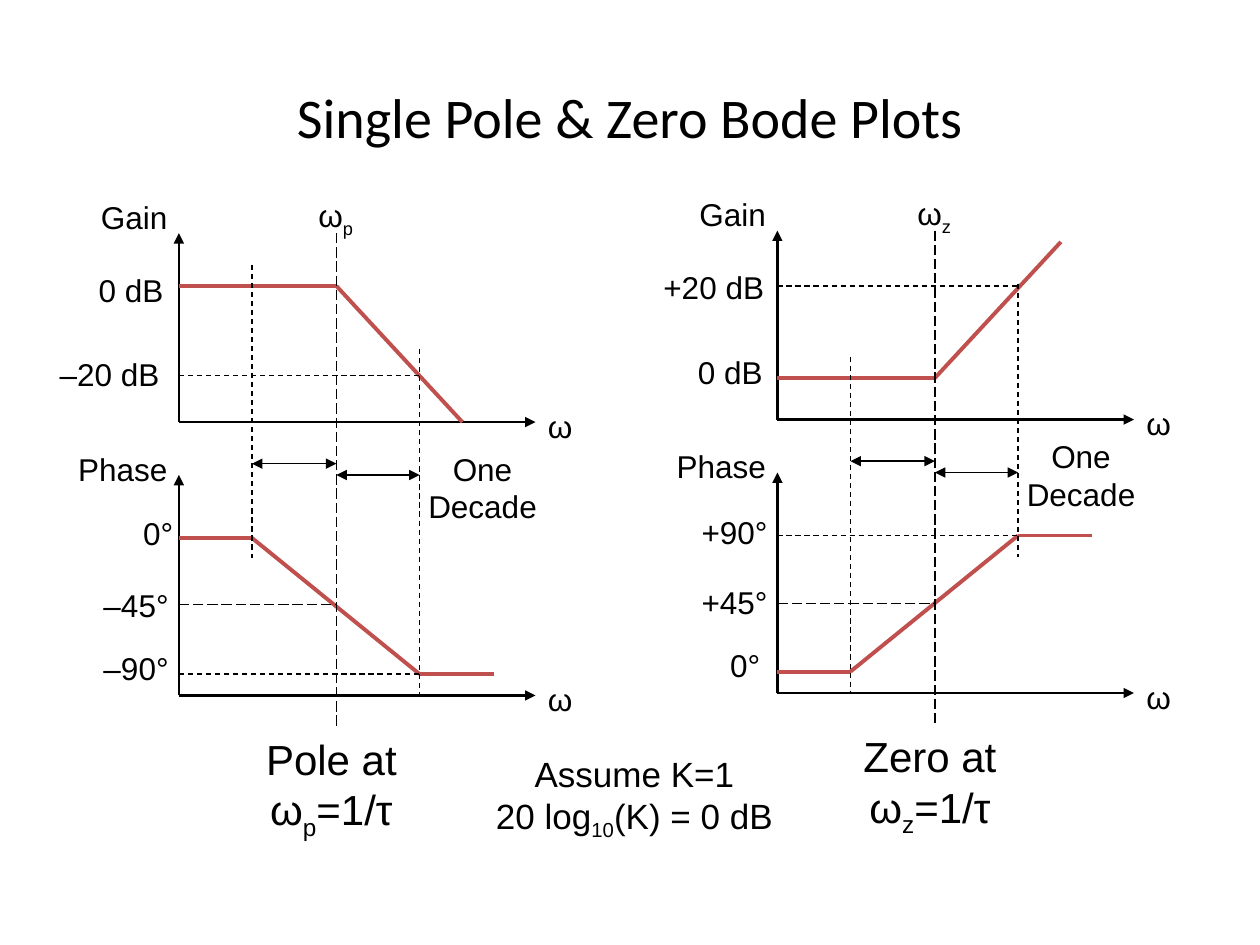
from pptx import Presentation
from pptx.dml.color import RGBColor
from pptx.enum.dml import MSO_LINE
from pptx.enum.shapes import MSO_CONNECTOR
from pptx.enum.text import MSO_ANCHOR, MSO_AUTO_SIZE, PP_ALIGN
from pptx.oxml.ns import qn
from pptx.util import Inches, Pt
from lxml import etree

STRAIGHT = MSO_CONNECTOR.STRAIGHT
DASH, LONG_DASH = MSO_LINE.DASH, MSO_LINE.LONG_DASH
LEFT, CENTER = PP_ALIGN.LEFT, PP_ALIGN.CENTER
MIDDLE = MSO_ANCHOR.MIDDLE
FIT = MSO_AUTO_SIZE.SHAPE_TO_FIT_TEXT
BLACK, RED = "000000", "C0504D"
BEFORE, CORNER, AFTER, AXIS_END = 0.58, 1.25, 1.91, 2.83
GAIN_BASE, PHASE_TOP, PHASE_BASE = 1.5, 1.92, 3.67

POLE = {
    "origin": (1.42, 1.85), "name": "Pole", "sub": "p", "decade_top": 1.67,
    "curves": [[(0, 0.42), (CORNER, 0.42), (2.25, 1.5)],
               [(0, 2.42), (BEFORE, 2.42), (AFTER, 3.5), (2.5, 3.5)]],
    "levels": [(1.13, AFTER, DASH), (2.95, CORNER, LONG_DASH), (3.5, AFTER, DASH)],
    "drops": [(BEFORE, 0.25, 2.58), (AFTER, 0.92, PHASE_BASE)],
    "ticks": [("0 dB", -0.84, 0.25, 0.92), ("–20 dB", -1.09, 0.92, 1.08),
              ("0°", -0.5, 2.18, 0.67), ("–45°", -0.84, 2.75, 1),
              ("–90°", -0.84, 3.25, 1)],
}
ZERO = {
    "origin": (6.17, 1.83), "name": "Zero", "sub": "z", "decade_top": 1.59,
    "curves": [[(0, 1.17), (CORNER, 1.17), (2.25, 0.09)],
               [(0, 3.5), (BEFORE, 3.5), (AFTER, 2.42), (2.5, 2.42)]],
    "levels": [(0.44, AFTER, DASH), (2.96, CORNER, LONG_DASH), (2.42, AFTER, DASH)],
    "drops": [(BEFORE, 1, PHASE_BASE), (AFTER, 0.42, 2.59)],
    "ticks": [("+20 dB", -1.09, 0.25, 1.17), ("0 dB", -0.75, 0.92, 0.75),
              ("+90°", -0.84, 2.19, 1), ("+45°", -0.84, 2.75, 1),
              ("0°", -0.67, 3.25, 0.83)],
}


def rgb(value):
    """Turn a hex string into a colour."""
    return RGBColor.from_string(value)


def write(tf, text, size=18, font="Arial", color=BLACK, align=CENTER):
    """Write lines of text, with subscripts set between bars."""
    for i, line in enumerate(text.split("\n")):
        p = tf.paragraphs[0] if i == 0 else tf.add_paragraph()
        p.alignment = align
        for j, part in enumerate(line.split("|")):
            if not part:
                continue
            r = p.add_run()
            r.text = part
            r.font.size, r.font.name = Pt(size), font
            r.font.color.rgb = rgb(color)
            if j % 2:
                r.font._element.set("baseline", "-25000")


def add_label(slide, text, left, top, width, height=0.4, wrap=True, **fmt):
    """Add a text box that fits its text."""
    sp = slide.shapes.add_textbox(Inches(left), Inches(top), Inches(width), Inches(height))
    tf = sp.text_frame
    tf.word_wrap, tf.auto_size = wrap, FIT
    write(tf, text, **fmt)


def add_line(slide, start, end, color=BLACK, width=0.75, dash=None, ends=()):
    """Add a straight line with optional dashes and arrowheads."""
    sp = slide.shapes.add_connector(STRAIGHT, *(Inches(v) for v in (*start, *end)))
    sp.line.color.rgb = rgb(color)
    sp.line.width = Pt(width)
    if dash is not None:
        sp.line.dash_style = dash
    ln = sp.line._get_or_add_ln()
    for tag in ends:
        etree.SubElement(ln, qn(tag), type="triangle")
    etree.SubElement(sp._element.spPr, qn("a:effectLst"))


def add_bode(slide, plot):
    """Add the gain and phase plots of one pole or zero."""
    x0, y0 = plot["origin"]
    omega = f"ω|{plot['sub']}|"

    def line(start, end, **fmt):
        """Add a line placed from the plot origin."""
        add_line(slide, (x0 + start[0], y0 + start[1]), (x0 + end[0], y0 + end[1]), **fmt)

    def label(text, left, top, width, height=0.4, **fmt):
        """Add a label placed from the plot origin."""
        add_label(slide, text, x0 + left, y0 + top, width, height, **fmt)

    for top, base in ((0, GAIN_BASE), (PHASE_TOP, PHASE_BASE)):
        for end in ((0, top), (AXIS_END, base)):
            line((0, base), end, width=1.5, ends=["a:tailEnd"])
        label("ω", AXIS_END, base - 0.17, 0.42, align=LEFT)
    for curve in plot["curves"]:
        for start, end in zip(curve, curve[1:]):
            line(start, end, color=RED, width=2.25)
    for y, end, dash in plot["levels"]:
        line((0, y), (end, y), dash=dash)
    for x, top, bottom in plot["drops"]:
        line((x, top), (x, bottom), dash=DASH)
    line((CORNER, 0), (CORNER, 3.92), dash=LONG_DASH)
    for start, end, y in ((BEFORE, CORNER, 1.83), (CORNER, AFTER, 1.92)):
        line((start, y), (end, y), ends=["a:headEnd", "a:tailEnd"])

    for tick in plot["ticks"]:
        label(*tick)
    label("Gain", -0.84, -0.33, 0.97)
    label("Phase", -0.92, 1.67, 0.95)
    label("One Decade", 1.66, plot["decade_top"], 1.5, 0.7)
    label(omega, 0.91, -0.34, 0.67)
    label(f"{plot['name']} at {omega}=1/τ", 0.5, 3.92, 1.42, 0.9, size=24)


def add_title(slide, text):
    """Place and fill the title."""
    sp = slide.shapes.title
    sp.left, sp.top, sp.width, sp.height = (Inches(v) for v in (0.5, 0.3, 9, 1.25))
    sp.text_frame.vertical_anchor = MIDDLE
    write(sp.text_frame, text, size=32, font="Calibri")


def main():
    """Build the slide and save it."""
    prs = Presentation()
    prs.slide_width, prs.slide_height = Inches(10), Inches(7.5)
    slide = prs.slides.add_slide(prs.slide_layouts[5])
    add_title(slide, "Single Pole & Zero Bode Plots")
    for plot in (POLE, ZERO):
        add_bode(slide, plot)
    add_label(slide, "Assume K=1\n20 log|10|(K) = 0 dB", 3.83, 5.92, 2.41, 0.77,
              wrap=False, size=20)
    prs.save("out.pptx")


if __name__ == "__main__":
    main()
